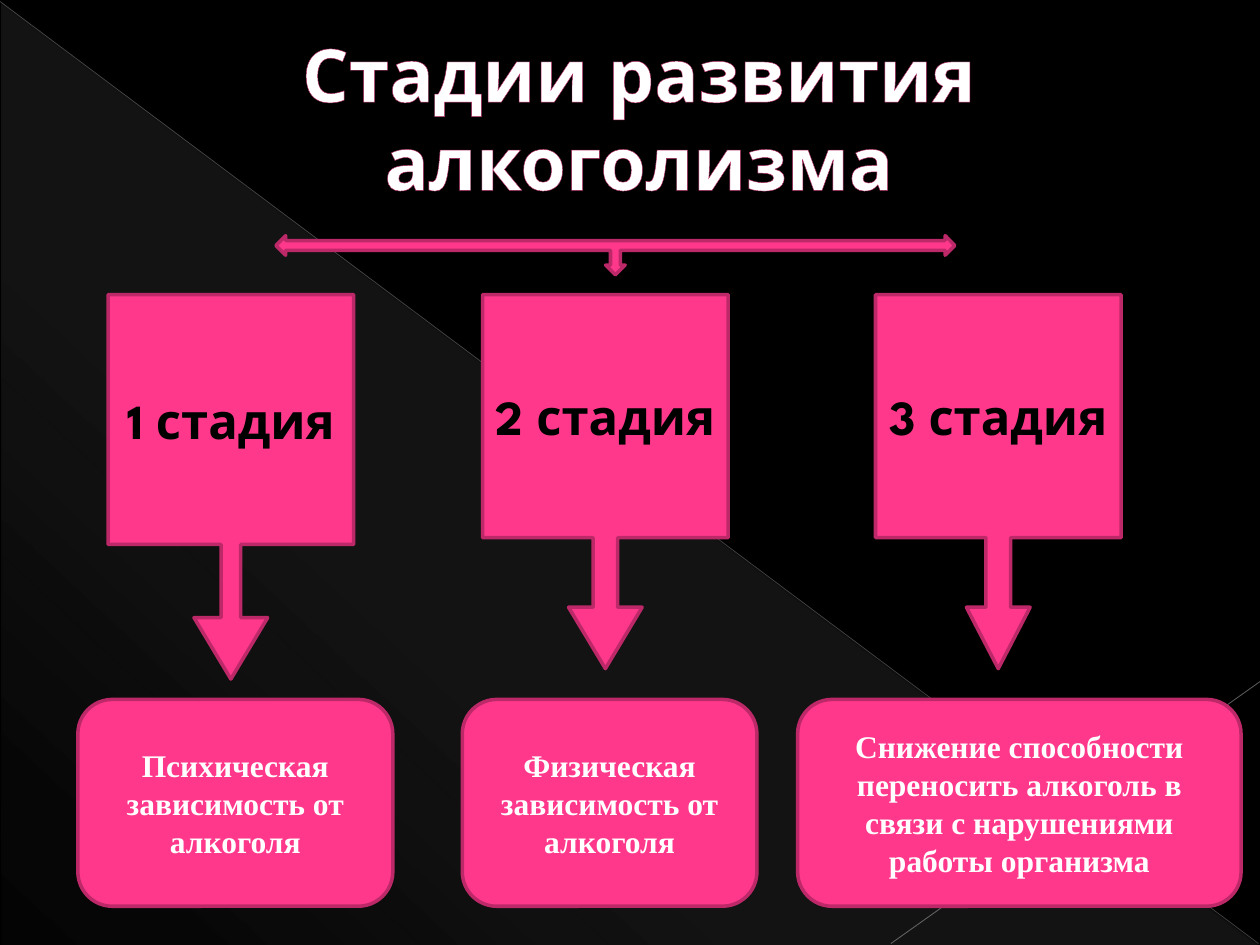
import pptx
import pptx.dml.color
import pptx.enum.shapes
import pptx.enum.text
import pptx.oxml
import pptx.oxml.ns
import pptx.util
from lxml import etree

Cm = pptx.util.Cm
Pt = pptx.util.Pt
qn = pptx.oxml.ns.qn
SHAPE = pptx.enum.shapes.MSO_SHAPE

HEADING = "Стадии развития алкоголизма"
HEADING_BOX = (1.98, 0.41, 20.45, 3.89)
HEADING_INDENT = 1.35

STAGES = [
    {"name": "1 стадия", "left": 2.18, "height": 7.75, "arrow": (0.08, 0.15, 0.25, 0.65),
     "effect": "Психическая зависимость от алкоголя", "effect_left": 1.57, "effect_width": 6.35},
    {"name": "2 стадия", "left": 9.73, "height": 7.54, "arrow": (0.1, 0.15, 0.25, 0.65),
     "effect": "Физическая зависимость от алкоголя", "effect_left": 9.32, "effect_width": 5.94},
    {"name": "3 стадия", "left": 17.65, "height": 7.54, "arrow": (0.1, 0.13, 0.25, 0.65),
     "effect": "Снижение способности переносить алкоголь в связи с нарушениями работы организма",
     "effect_left": 16.08, "effect_width": 8.94},
]
STAGE_TOP, STAGE_WIDTH = 5.94, 4.95
EFFECT_TOP, EFFECT_HEIGHT = 14.1, 4.17
BRANCH_BOX = (5.56, 4.75, 13.69, 0.79)

WEDGE_BOX = (0.03, 0.05, 25.35, 19)
WEDGE_STOPS = [(0, 10), (70, 8), (100, 1)]
WEDGE_ANGLE = 133
DIAGONALS = [
    {"ends": (0, 0.03, 25.37, 19.02), "color": "BFBFBF", "width": 0.39, "opacity": 35},
    {"ends": (25.4, 13.74, 17.96, 19.02), "color": "C6C6C6", "width": 0.47, "opacity": 45},
]

PINK, PINK_EDGE = "FF388C", "BD2968"
HEADING_FONT = {"name": "League Spartan", "size": Pt(42), "bold": True}
STAGE_FONT = {"name": "League Spartan", "size": Pt(28), "bold": True}
EFFECT_FONT = {"name": "Times New Roman", "size": Pt(18), "bold": True}


def paint(color_format, color):
    color_format.rgb = pptx.dml.color.RGBColor.from_string(color)


def fill_solid(fill, color):
    fill.solid()
    paint(fill.fore_color, color)


def color_element(parent, color, opacity=100):
    srgb = etree.SubElement(etree.SubElement(parent, qn("a:solidFill"))
                            if parent.tag == qn("a:ln") else parent,
                            qn("a:srgbClr"), val=color)
    if opacity < 100:
        etree.SubElement(srgb, qn("a:alpha"), val=str(opacity * 1000))


def write(shape, text, font, color):
    frame = shape.text_frame
    frame.word_wrap = True
    frame.auto_size = pptx.enum.text.MSO_AUTO_SIZE.NONE
    frame.vertical_anchor = pptx.enum.text.MSO_ANCHOR.MIDDLE
    paragraph = frame.paragraphs[0]
    paragraph.alignment = pptx.enum.text.PP_ALIGN.CENTER
    run = paragraph.add_run()
    run.text = text
    for key, value in font.items():
        setattr(run.font, key, value)
    paint(run.font.color, color)
    return paragraph, run


def add_pink(slide, preset, box):
    shape = slide.shapes.add_shape(preset, *map(Cm, box))
    shape.shadow.inherit = False
    fill_solid(shape.fill, PINK)
    paint(shape.line.color, PINK_EDGE)
    shape.line.width = Pt(2)
    return shape


def add_backdrop(slide):
    fill_solid(slide.background.fill, "000000")
    wedge = slide.shapes.add_shape(SHAPE.RIGHT_TRIANGLE, *map(Cm, WEDGE_BOX))
    wedge.shadow.inherit = False
    wedge.line.fill.background()
    gradient = etree.Element(qn("a:gradFill"), rotWithShape="1")
    stops = etree.SubElement(gradient, qn("a:gsLst"))
    for position, opacity in WEDGE_STOPS:
        stop = etree.SubElement(stops, qn("a:gs"), pos=str(position * 1000))
        color_element(stop, "D2D2D2", opacity)
    etree.SubElement(gradient, qn("a:lin"), ang=str(WEDGE_ANGLE * 60000), scaled="0")
    wedge.element.spPr.find(qn("a:prstGeom")).addnext(gradient)

    for diagonal in DIAGONALS:
        line = slide.shapes.add_connector(
            pptx.enum.shapes.MSO_CONNECTOR.STRAIGHT, *map(Cm, diagonal["ends"]))
        line.line.width = Pt(diagonal["width"])
        properties = line.element.spPr
        color_element(properties.find(qn("a:ln")), diagonal["color"], diagonal["opacity"])
        etree.SubElement(properties, qn("a:effectLst"))


def add_heading(slide):
    heading = slide.shapes.title
    for side, value in zip(("left", "top", "width", "height"), HEADING_BOX):
        setattr(heading, side, Cm(value))
    paragraph, run = write(heading, HEADING, HEADING_FONT, "FFFFFF")
    properties = paragraph._p.get_or_add_pPr()
    properties.set("marL", str(Cm(HEADING_INDENT)))
    properties.set("indent", "0")
    outline = etree.Element(qn("a:ln"), w=str(Pt(0.5)))
    color_element(outline, "B12761")
    run.font._element.insert(0, outline)
    heading.element.getparent().append(heading.element)


def add_stages(slide):
    for stage in STAGES:
        effect = add_pink(slide, SHAPE.ROUNDED_RECTANGLE,
                          (stage["effect_left"], EFFECT_TOP, stage["effect_width"], EFFECT_HEIGHT))
        write(effect, stage["effect"], EFFECT_FONT, "FFFFFF")
        callout = add_pink(slide, SHAPE.DOWN_ARROW_CALLOUT,
                           (stage["left"], STAGE_TOP, STAGE_WIDTH, stage["height"]))
        for index, value in enumerate(stage["arrow"]):
            callout.adjustments[index] = value
        write(callout, stage["name"], STAGE_FONT, "000000")
    branch = add_pink(slide, SHAPE.LEFT_RIGHT_UP_ARROW, BRANCH_BOX)
    branch.rotation = 180


def main():
    deck = pptx.Presentation()
    deck.slide_width, deck.slide_height = Cm(25.4), Cm(19.05)
    slide = deck.slides.add_slide(deck.slide_layouts[5])
    add_backdrop(slide)
    add_heading(slide)
    add_stages(slide)
    deck.save("out.pptx")


if __name__ == "__main__":
    main()
